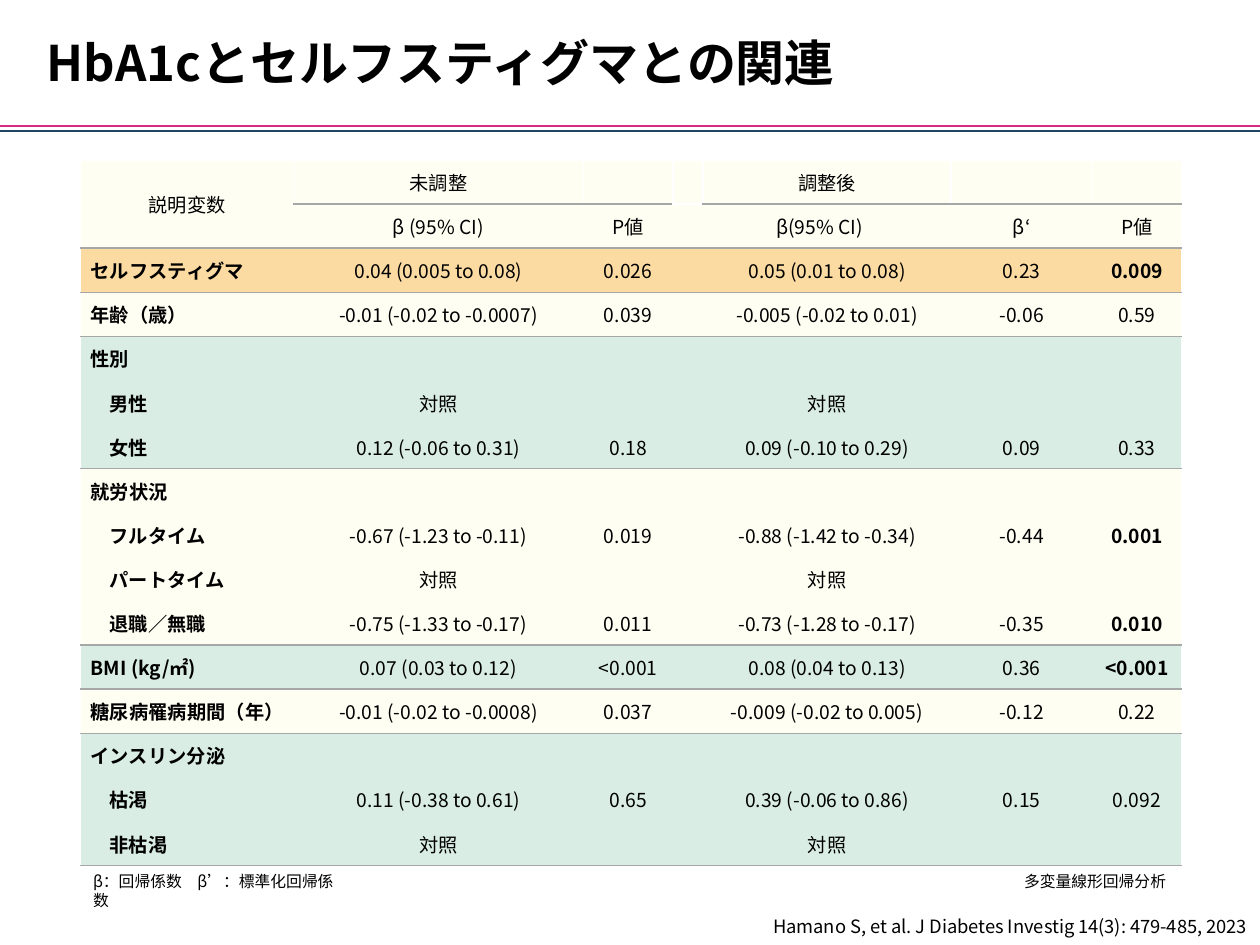
import pptx
import pptx.util
import pptx.dml.color
import pptx.enum.shapes
import pptx.enum.text
import pptx.oxml.ns
from lxml import etree

ALIGN = pptx.enum.text.PP_ALIGN
ANCHOR = pptx.enum.text.MSO_ANCHOR
FONT = "Noto Sans CJK JP"
COLORS = {
    "ink": "000000", "white": "FFFFFF", "rule": "A6A7A7", "navy": "224463",
    "pink": "D82B83", "cream": "FFFEF3", "mint": "D9EDE5", "gold": "FCDBA3",
}
COLS = [16.9, 23, 7.1, 2.4, 19.7, 11.2, 7.1]
ROW = 4.67
HEAD = [
    ["説明変数", "未調整", "", "", "調整後", "", ""],
    ["", "β (95% CI)", "P値", "", "β(95% CI)", "β‘", "P値"],
]
REF = ["対照", "", "", "対照", "", ""]
BLANK = [""] * 6
GROUPS = [
    ("gold", [["セルフスティグマ", "0.04 (0.005 to 0.08)", "0.026", "", "0.05 (0.01 to 0.08)", "0.23", "0.009"]]),
    ("cream", [["年齢（歳）", "-0.01 (-0.02 to -0.0007)", "0.039", "", "-0.005 (-0.02 to 0.01)", "-0.06", "0.59"]]),
    ("mint", [
        ["性別", *BLANK],
        ["男性", *REF],
        ["女性", "0.12 (-0.06 to 0.31)", "0.18", "", "0.09 (-0.10 to 0.29)", "0.09", "0.33"],
    ]),
    ("cream", [
        ["就労状況", *BLANK],
        ["フルタイム", "-0.67 (-1.23 to -0.11)", "0.019", "", "-0.88 (-1.42 to -0.34)", "-0.44", "0.001"],
        ["パートタイム", *REF],
        ["退職／無職", "-0.75 (-1.33 to -0.17)", "0.011", "", "-0.73 (-1.28 to -0.17)", "-0.35", "0.010"],
    ]),
    ("mint", [["BMI (kg/㎡)", "0.07 (0.03 to 0.12)", "<0.001", "", "0.08 (0.04 to 0.13)", "0.36", "<0.001"]]),
    ("cream", [["糖尿病罹病期間（年）", "-0.01 (-0.02 to -0.0008)", "0.037", "", "-0.009 (-0.02 to 0.005)", "-0.12", "0.22"]]),
    ("mint", [
        ["インスリン分泌", *BLANK],
        ["枯渇", "0.11 (-0.38 to 0.61)", "0.65", "", "0.39 (-0.06 to 0.86)", "0.15", "0.092"],
        ["非枯渇", *REF],
    ]),
]
STRONG = {"0.009", "0.001", "0.010", "<0.001"}


def color(name):
    return pptx.dml.color.RGBColor.from_string(COLORS[name])


class Deck:
    def __init__(self):
        self.show = pptx.Presentation()
        self.show.slide_width = pptx.util.Inches(10)
        self.show.slide_height = pptx.util.Inches(7.5)
        self.slide = self.show.slides.add_slide(self.show.slide_layouts[5])

    def wide(self, share):
        return int(self.show.slide_width * share / 100)

    def high(self, share):
        return int(self.show.slide_height * share / 100)

    def box(self, x, y, w, h):
        return self.wide(x), self.high(y), self.wide(w), self.high(h)

    def label(self, frame, text, size, bold=False, align=ALIGN.LEFT):
        frame.text = text
        frame.word_wrap = True
        para = frame.paragraphs[0]
        para.alignment = align
        para._p.get_or_add_endParaRPr().set("sz", str(int(size * 100)))
        for run in para.runs:
            run.font.size = pptx.util.Pt(size)
            run.font.bold = bold
            run.font.name = FONT
            run.font.color.rgb = color("ink")
            east = etree.SubElement(run.font._element, pptx.oxml.ns.qn("a:ea"))
            east.set("typeface", FONT)

    def title(self, text, *area):
        shape = self.slide.shapes.title
        shape.left, shape.top, shape.width, shape.height = self.box(*area)
        self.label(shape.text_frame, text, 28, bold=True)
        shape.text_frame.vertical_anchor = ANCHOR.MIDDLE

    def rule(self, y, name):
        line = self.slide.shapes.add_connector(
            pptx.enum.shapes.MSO_CONNECTOR.STRAIGHT, 0, self.high(y), self.wide(100), self.high(y))
        line.line.color.rgb = color(name)
        line.line.width = pptx.util.Pt(1.5)
        etree.SubElement(line._element.spPr, pptx.oxml.ns.qn("a:effectLst"))

    def note(self, text, area, size=9, align=ALIGN.LEFT):
        shape = self.slide.shapes.add_textbox(*self.box(*area))
        self.label(shape.text_frame, text, size, align=align)

    def edge(self, cell, sides):
        props = cell._tc.get_or_add_tcPr()
        for side in "LRTB":
            line = etree.SubElement(props, pptx.oxml.ns.qn("a:ln" + side), w="12700")
            if side in sides:
                fill = etree.SubElement(line, pptx.oxml.ns.qn("a:solidFill"))
                etree.SubElement(fill, pptx.oxml.ns.qn("a:srgbClr"), val=COLORS[sides[side]])
            else:
                etree.SubElement(line, pptx.oxml.ns.qn("a:noFill"))

    def cell(self, cell, text, fill, sides, bold=False, align=ALIGN.CENTER, left=0, right=0):
        self.edge(cell, sides)
        cell.fill.solid()
        cell.fill.fore_color.rgb = color(fill)
        cell.vertical_anchor = ANCHOR.MIDDLE
        cell.margin_top = cell.margin_bottom = 0
        cell.margin_left, cell.margin_right = self.wide(left), self.wide(right)
        self.label(cell.text_frame, text, 11, bold, align)

    def table(self, x, y):
        count = len(HEAD) + sum(len(rows) for _, rows in GROUPS)
        frame = self.slide.shapes.add_table(
            count, len(COLS), *self.box(x, y, sum(COLS), ROW * count))
        grid = frame.table
        grid.first_row = grid.horz_banding = False
        for col, share in zip(grid.columns, COLS):
            col.width = self.wide(share)
        for row in grid.rows:
            row.height = self.high(ROW)
        self.head(grid)
        self.body(grid)

    def head(self, grid):
        for r, texts in enumerate(HEAD):
            for c, text in enumerate(texts):
                mid = "white" if c == 3 else "rule"
                if r == 0:
                    sides = dict(L="white", R="white", T="white", B=mid)
                else:
                    sides = dict(T=mid, B="rule")
                    if c in (0, len(COLS) - 1):
                        sides["R"] = "white"
                self.cell(grid.cell(r, c), text, "cream", sides,
                          right=1.2 if (r, c) == (1, 4) else 0)
        grid.cell(0, 0).merge(grid.cell(1, 0))

    def body(self, grid):
        r = len(HEAD)
        for fill, rows in GROUPS:
            for n, texts in enumerate(rows):
                for c, text in enumerate(texts):
                    sides = {}
                    if n == 0:
                        sides["T"] = "rule"
                    if n == len(rows) - 1:
                        sides["B"] = "rule"
                    if c == 0:
                        sides["L"] = "white"
                    if c == len(COLS) - 1:
                        sides["R"] = "white"
                    first = c == 0
                    strong = first or (c == len(COLS) - 1 and text in STRONG)
                    self.cell(grid.cell(r, c), text, fill, sides, strong,
                              ALIGN.LEFT if first else ALIGN.CENTER,
                              left=(2.3 if n else 0.8) if first else 0)
                r += 1


def main():
    deck = Deck()
    deck.rule(13.87, "navy")
    deck.rule(13.33, "pink")
    deck.title("HbA1cとセルフスティグマとの関連", 2.7, 2.8, 88, 7.6)
    deck.note("Hamano S, et al. J Diabetes Investig 14(3): 479-485, 2023",
              (48.9, 96.2, 51.1, 3.73), 10.5, ALIGN.RIGHT)
    deck.table(6.4, 16.93)
    deck.note("β：回帰係数　β’：標準化回帰係数", (6.4, 91.6, 21.1, 3.33))
    deck.note("多変量線形回帰分析", (80.3, 91.6, 13.4, 3.33))
    deck.show.save("out.pptx")


if __name__ == "__main__":
    main()
